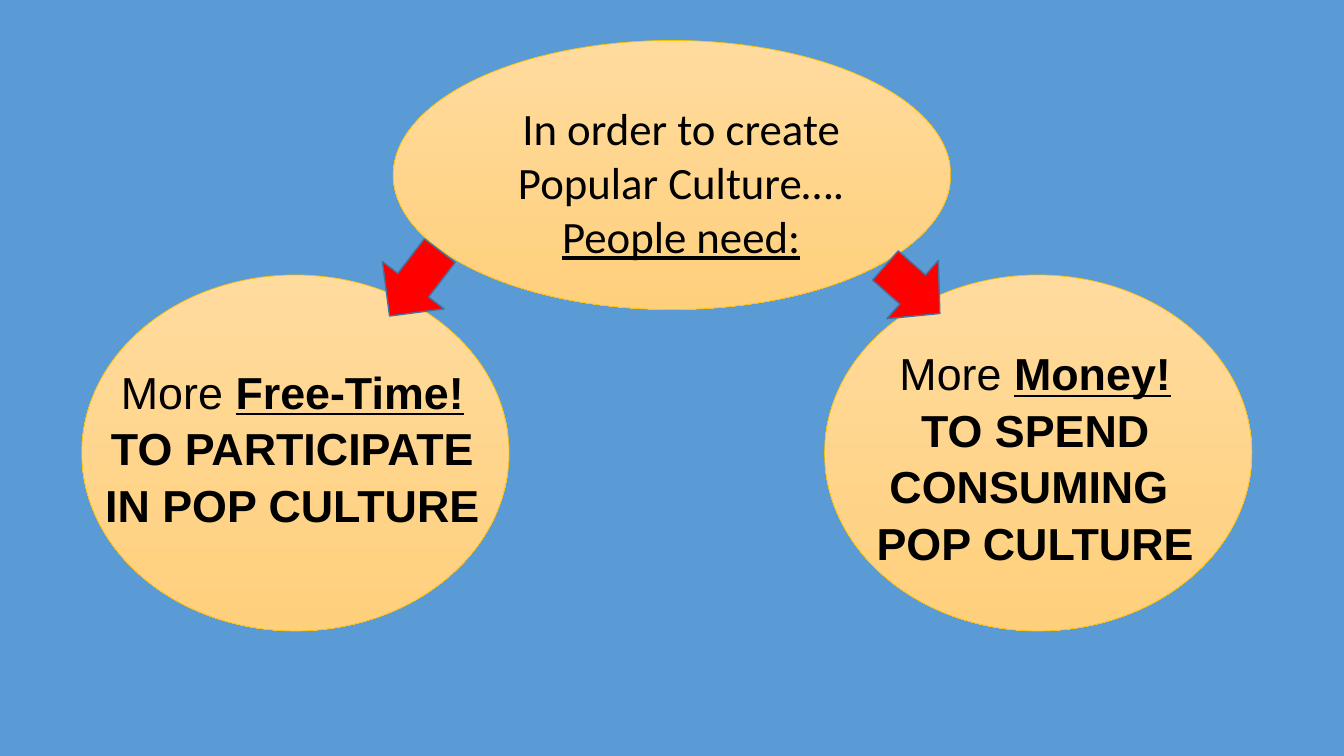
from pptx import Presentation
from pptx.dml.color import RGBColor
from pptx.enum.shapes import MSO_SHAPE
from pptx.enum.text import MSO_AUTO_SIZE, PP_ALIGN
from pptx.util import Cm, Pt

OVAL, ARROW = MSO_SHAPE.OVAL, MSO_SHAPE.DOWN_ARROW
CENTER, GROW = PP_ALIGN.CENTER, MSO_AUTO_SIZE.SHAPE_TO_FIT_TEXT

COLORS = {
    "back": "5B9BD5", "light": "FFDB9E", "deep": "FFD07C", "rim": "FFC000",
    "arrow": "FF0000", "edge": "43739E", "text": "000000",
}
PLAIN, UNDER = {}, {"under": True}
BOLD, STRONG = {"bold": True}, {"bold": True, "under": True}


def color(name):
    return RGBColor.from_string(COLORS[name])


def add_run(para, text, font="Arial", size=32, bold=False, under=False):
    run = para.add_run()
    run.text = text
    run.font.name, run.font.size = font, Pt(size)
    run.font.bold, run.font.underline = bold, under
    run.font.color.rgb = color("text")


def add_shape(slide, kind, box, rim, width):
    shape = slide.shapes.add_shape(kind, *map(Cm, box))
    shape.shadow.inherit = False
    shape.line.color.rgb = color(rim)
    shape.line.width = Pt(width)
    return shape


def add_oval(slide, box):
    fill = add_shape(slide, OVAL, box, "rim", 0.5).fill
    fill.gradient()
    fill.gradient_angle = 270
    for stop, name in zip(fill.gradient_stops, ("light", "deep")):
        stop.color.rgb = color(name)


def add_bubble(slide, box, inset, paras, font="Arial", space=1.05):
    """Oval with a text box; inset is the text's offset and size."""
    add_oval(slide, box)
    left, top, width, height = inset
    place = (box[0] + left, box[1] + top, width, height)
    frame = slide.shapes.add_textbox(*map(Cm, place)).text_frame
    frame.word_wrap = True
    frame.auto_size = GROW
    for i, runs in enumerate(paras):
        para = frame.add_paragraph() if i else frame.paragraphs[0]
        para.alignment = CENTER
        para.line_spacing = space
        for text, style in runs:
            add_run(para, text, font=font, **style)


def add_arrow(slide, box, turn):
    arrow = add_shape(slide, ARROW, box, "edge", 1)
    arrow.fill.solid()
    arrow.fill.fore_color.rgb = color("arrow")
    arrow.rotation = turn


def main():
    deck = Presentation()
    deck.slide_width, deck.slide_height = Cm(33.87), Cm(19.05)
    slide = deck.slides.add_slide(deck.slide_layouts[6])
    slide.background.fill.solid()
    slide.background.fill.fore_color.rgb = color("back")

    # Opening statement
    add_bubble(slide, (9.91, 1.02, 14.05, 6.78), (2.08, 1.4, 10.36, 4.37), [
        [("In order to create Popular Culture…. ", PLAIN),
         ("People need:", UNDER)],
    ], font="Calibri", space=1)

    # The two needs
    top, width, height = 6.93, 10.77, 8.97
    add_bubble(slide, (2.06, top, width, height), (0, 2.06, 10.62, 4.37), [
        [("More ", PLAIN), ("Free-Time!", STRONG)],
        [("TO PARTICIPATE IN POP CULTURE", BOLD)],
    ])
    add_bubble(slide, (20.78, top, width, height), (0, 1.6, 10.62, 5.74), [
        [("More ", PLAIN), ("Money!", STRONG)],
        [("TO SPEND CONSUMING ", BOLD)],
        [("POP CULTURE", BOLD)],
    ])

    # Arrows from the statement to the needs
    add_arrow(slide, (9.47, 6.1, 1.96, 2.08), 37.5)
    add_arrow(slide, (22.02, 6.38, 1.96, 1.83), 311.4)

    deck.save("out.pptx")


if __name__ == "__main__":
    main()
